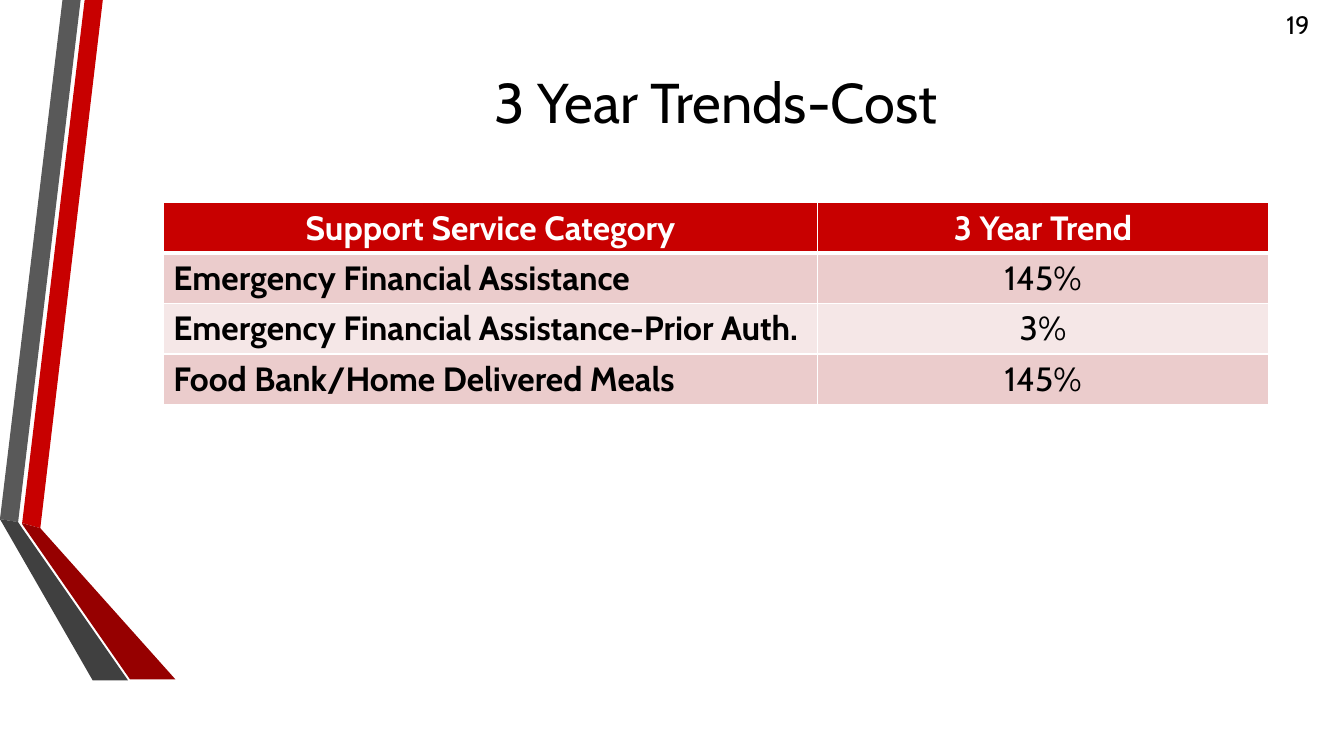
from lxml import etree
from pptx import Presentation
from pptx.dml.color import RGBColor
from pptx.enum import text as t
from pptx.oxml import ns
from pptx.util import Inches, Pt

FONT = "Cabin"
COLORS = {
    "black": "000000", "white": "FFFFFF",
    "red": "C80000", "dark_red": "960000",
    "gray": "595959", "dark_gray": "404040",
    "band_dark": "EBCCCC", "band_light": "F5E7E7",
}
RIBBONS = [
    ("red", [(0.22, 5.19), (0.4, 5.24), (1.02, 0), (0.84, 0)]),
    ("gray", [(0.8, 0), (0.62, 0), (0, 5.15), (0.18, 5.18)]),
    ("dark_red", [(0.22, 5.2), (1.29, 6.74), (1.74, 6.74), (0.4, 5.24), (0.22, 5.19)]),
    ("dark_gray", [(1.27, 6.75), (0.22, 5.24), (0.18, 5.18), (0, 5.15), (0.92, 6.75)]),
]
TRENDS = [
    ("Support Service Category", "3 Year Trend"),
    ("Emergency Financial Assistance", "145%"),
    ("Emergency Financial Assistance-Prior Auth.", "3%"),
    ("Food Bank/Home Delivered Meals", "145%"),
]
COLUMN_WIDTHS = (6.49, 4.47)
ROW_HEIGHT = 0.5


def rgb(name):
    return RGBColor.from_string(COLORS[name])


def write(frame, content, size, color="black", bold=False, align=t.PP_ALIGN.LEFT):
    """Put one formatted paragraph into a text frame."""
    frame.text = content
    paragraph = frame.paragraphs[0]
    paragraph.alignment = align
    font = paragraph.runs[0].font
    font.name, font.size, font.bold = FONT, Pt(size), bold
    font.color.rgb = rgb(color)


def add_ribbon(slide, color, points):
    corners = [(Inches(x), Inches(y)) for x, y in points]
    builder = slide.shapes.build_freeform(*corners[0])
    builder.add_line_segments(corners[1:], close=True)
    ribbon = builder.convert_to_shape()
    ribbon.shadow.inherit = False
    ribbon.fill.solid()
    ribbon.fill.fore_color.rgb = rgb(color)
    ribbon.line.fill.background()


def add_page_number(slide, number):
    box = slide.shapes.add_textbox(Inches(12.66), Inches(0.04), Inches(0.67), Inches(0.4))
    box.text_frame.word_wrap = True
    write(box.text_frame, number, 18)


def set_title(slide, content):
    title = slide.shapes.title
    title.left, title.top = Inches(1.62), Inches(0.04)
    title.width, title.height = Inches(10.96), Inches(1.92)
    title.text_frame.vertical_anchor = t.MSO_ANCHOR.MIDDLE
    write(title.text_frame, content, 40, align=t.PP_ALIGN.CENTER)


def set_borders(cell, top, bottom):
    """Draw white cell borders; top and bottom widths are in points."""
    properties = cell._tc.get_or_add_tcPr()
    for side, width in (("L", 1), ("R", 1), ("T", top), ("B", bottom)):
        line = etree.SubElement(properties, ns.qn(f"a:ln{side}"), w=str(Pt(width)))
        fill = etree.SubElement(line, ns.qn("a:solidFill"))
        etree.SubElement(fill, ns.qn("a:srgbClr"), val=COLORS["white"])


def add_trend_table(slide):
    table = slide.shapes.add_table(
        len(TRENDS), len(COLUMN_WIDTHS), Inches(1.62), Inches(2.01),
        Inches(sum(COLUMN_WIDTHS)), Inches(ROW_HEIGHT * len(TRENDS))).table
    for column, width in zip(table.columns, COLUMN_WIDTHS):
        column.width = Inches(width)
    for r, row in enumerate(TRENDS):
        header = r == 0
        band = "red" if header else "band_dark" if r % 2 else "band_light"
        for c, content in enumerate(row):
            cell = table.cell(r, c)
            category = c == 0
            set_borders(cell, top=3 if r == 1 else 1, bottom=3 if header else 1)
            cell.fill.solid()
            cell.fill.fore_color.rgb = rgb(band)
            write(cell.text_frame, content, 24,
                  color="white" if header else "black",
                  bold=header or category,
                  align=t.PP_ALIGN.LEFT if category and not header else t.PP_ALIGN.CENTER)


def main():
    deck = Presentation()
    deck.slide_width, deck.slide_height = Inches(13.33), Inches(7.5)
    slide = deck.slides.add_slide(deck.slide_layouts[5])
    for color, points in RIBBONS:
        add_ribbon(slide, color, points)
    add_page_number(slide, "19")
    set_title(slide, "3 Year Trends-Cost")
    add_trend_table(slide)
    deck.save("out.pptx")


if __name__ == "__main__":
    main()
